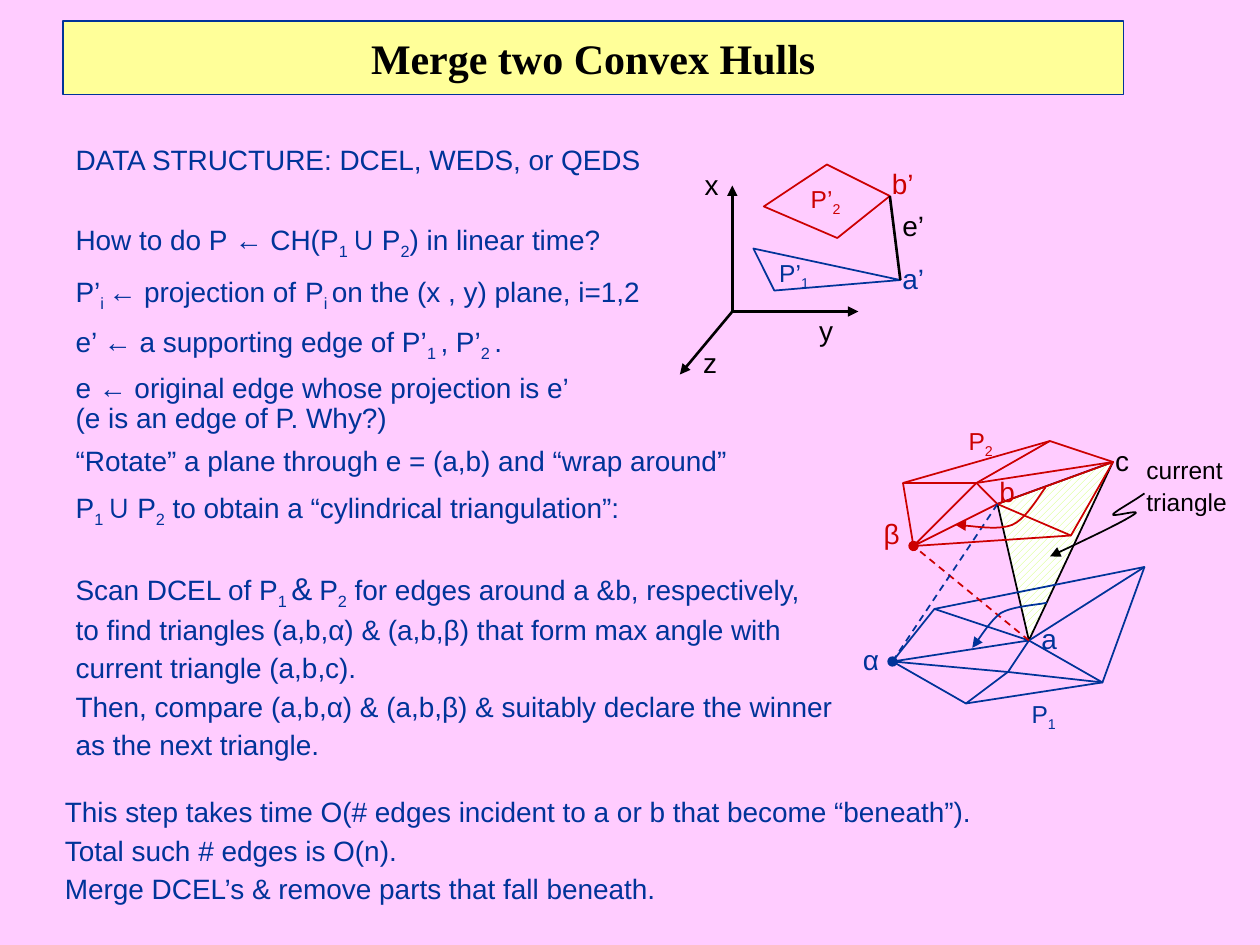
from lxml.etree import SubElement
from pptx import Presentation
from pptx.dml.color import RGBColor
from pptx.enum.dml import MSO_LINE, MSO_PATTERN
from pptx.enum.shapes import MSO_CONNECTOR
from pptx.enum.text import MSO_ANCHOR, MSO_AUTO_SIZE, PP_ALIGN
from pptx.oxml.ns import qn
from pptx.util import Inches, Pt

BLUE, RED, BLACK = "003399", "CC0000", "000000"
COLUMNS, ROWS = 120, 90
CELL = Inches(10) / COLUMNS

# Runs are plain strings or (text, size, baseline) tuples
ONE, TWO, INDEX = [(text, 16, -25) for text in ("1 ", "2", "i ")]
THIN = (" ", 14, 0)
P1_UNION_P2 = ["P", ONE, ("∪", 18, 0), THIN, "P", TWO]

# Each entry: line spacing, space before, runs
STEPS = [
    (0.9, 0, ["DATA STRUCTURE: DCEL, WEDS, or QEDS"]),
    (0.9, 25, ["How to do P ← CH(", *P1_UNION_P2, ") in linear time?"]),
    (0.9, 8.5, ["P’", INDEX, "← projection of", (" ", 18, 0), "P", INDEX,
                "on the (x , y) plane, i=1,2"]),
    (0.9, 8.5, ["e’ ← a supporting edge of P’", ONE, ", P’", ("2 ", 16, -25), "."]),
    (0.9, 8.5, ["e ← original edge whose projection is e’\v(e is an edge of P. Why?)"]),
    (0.8, 8.5, ["“Rotate” a plane through e = (a,b) and “wrap around”"]),
    (0.8, 8.5, [*P1_UNION_P2, " to obtain a “cylindrical triangulation”:"]),
    (0.7, 30, ["Scan DCEL of P", ONE, ("&", 18, 0), THIN, "P", TWO,
               " for edges around a &b, respectively,"]),
    (0.7, 8.5, ["to find triangles (a,b,α) & (a,b,β) that form max angle with"]),
    (0.7, 8.5, ["current triangle (a,b,c)."]),
    (0.7, 8.5, ["Then, compare (a,b,α) & (a,b,β) & suitably declare the winner"]),
    (0.7, 8.5, ["as the next triangle."]),
]
COST = [
    (0.7, 0, ["This step takes time O(# edges incident to a or b that become “beneath”)."]),
    (0.7, 8.5, ["Total such # edges is O(n)."]),
    (0.7, 8.5, ["Merge DCEL’s & remove parts that fall beneath."]),
]
CALLOUT = [(0.6, 0, ["current"]), (0.6, 8.5, ["triangle"])]

# Each entry: letter, subscript, colour, left, top, width in grid cells
LABELS = [
    ("x", "", BLACK, 65.9, 15.7, 3.75), ("y", "", BLACK, 76.8, 29.65, 3.75),
    ("z", "", BLACK, 65.75, 32.65, 3.75),
    ("P’", "1", BLUE, 73, 24, 5.25), ("P’", "2", RED, 76, 17, 5.25),
    ("e’", "", BLACK, 84.75, 19.67, 4.45), ("a’", "", BLUE, 84.75, 24.67, 4.45),
    ("b’", "", RED, 83.75, 15.67, 4.45),
    ("P", "2", RED, 91, 40, 4.8), ("P", "1", BLUE, 97, 66, 4.8),
    ("a", "", BLUE, 98, 59, 3.85), ("b", "", RED, 94, 45, 3.85),
    ("α", "", BLUE, 80.9, 61, 4.1), ("β", "", RED, 83, 49, 3.85),
    ("c", "", BLACK, 105, 42, 3.75),
]

# Corners of the two hulls in grid cells
A, B, C, ALPHA, BETA = (98, 61), (95, 48), (106, 44), (85, 63), (87, 52)
UPPER_LEFT, UPPER_TOP, UPPER_MID, UPPER_RIGHT = (86, 46), (100, 42), (93, 46), (102, 51)
LOWER_LEFT, LOWER_TOP, LOWER_RIGHT = (89, 58), (109, 54), (105, 65)
LOWER_END, LOWER_MID = (92, 67), (96, 64)

# Each entry: colour, Bézier control points (start, then three per piece)
CURVES = [
    (BLACK, [(109, 47), (107.7, 47.9), (106.2, 48.7), (106, 49), (105.8, 49.3),
             (109, 48.4), (108, 49), (107, 49.7), (103.4, 51.4), (100, 53)]),
    (BLUE, [(99.7, 57.4), (99, 57.6), (96.5, 57.7), (95.3, 58.4),
            (94.2, 59.2), (93.2, 61), (92.6, 61.7)]),
    (RED, [(99.6, 46.4), (99.1, 47), (97.8, 49.4), (96.4, 50),
           (94.9, 50.6), (92.2, 50), (91, 50)]),
]


def rgb(value):
    return RGBColor.from_string(value)


def cells(*values):
    return [round(value * CELL) for value in values]


def place(shape, left, top, width, height):
    box = zip(("left", "top", "width", "height"), cells(left, top, width, height))
    for name, value in box:
        setattr(shape, name, value)


def style_line(line, color, width=1, dashed=False, end=None):
    line.color.rgb = rgb(color)
    line.width = Pt(width)
    if dashed:
        line.dash_style = MSO_LINE.DASH
    if end:
        SubElement(line._get_or_add_ln(), qn("a:tailEnd"), type=end)


def write(frame, paragraphs, color, size=16, align=PP_ALIGN.LEFT, wrap=True):
    frame.word_wrap = wrap
    frame.auto_size = MSO_AUTO_SIZE.NONE
    frame.vertical_anchor = MSO_ANCHOR.TOP
    for number, (spacing, before, runs) in enumerate(paragraphs):
        paragraph = frame.add_paragraph() if number else frame.paragraphs[0]
        layout = {"alignment": align, "line_spacing": spacing,
                  "space_before": Pt(before), "space_after": Pt(0)}
        for name, value in layout.items():
            setattr(paragraph, name, value)
        for item in runs:
            text, points, baseline = (item, size, 0) if isinstance(item, str) else item
            for part_number, part in enumerate(text.split("\v")):
                if part_number:
                    paragraph.add_line_break()
                run = paragraph.add_run()
                run.text = part
                run.font.name, run.font.size = "Arial", Pt(points)
                run.font.color.rgb = rgb(color)
                if baseline:
                    run.font._element.set("baseline", str(baseline * 1000))


def add_text(slide, box, *content, **options):
    write(slide.shapes.add_textbox(*cells(*box)).text_frame, *content, **options)


def add_path(slide, points, color, closed=False, end=None):
    start, *rest = [cells(*point) for point in points]
    builder = slide.shapes.build_freeform(*start)
    builder.add_line_segments(rest, close=closed)
    path = builder.convert_to_shape()
    path.shadow.inherit = False
    path.fill.background()
    style_line(path.line, color, end=end)
    return path


def add_edge(slide, start, finish, color, **options):
    edge = slide.shapes.add_connector(MSO_CONNECTOR.STRAIGHT, *cells(*start, *finish))
    style_line(edge.line, color, **options)
    SubElement(edge._element.spPr, qn("a:effectLst"))


def bezier(controls, steps=10):
    """Sample a chain of cubic Bézier pieces."""
    points = [controls[0]]
    for first in range(0, len(controls) - 1, 3):
        piece = controls[first:first + 4]
        for step in range(1, steps + 1):
            t = step / steps
            weights = ((1 - t) ** 3, 3 * t * (1 - t) ** 2, 3 * t * t * (1 - t), t ** 3)
            points.append([sum(w * p[axis] for w, p in zip(weights, piece))
                           for axis in (0, 1)])
    return points


def add_title(slide):
    title = slide.shapes.title
    place(title, 6, 2, 101, 7)
    title.fill.solid()
    title.fill.fore_color.rgb = rgb("FFFF99")
    style_line(title.line, BLUE, 0.75)
    title.text_frame.text = "Merge two Convex Hulls"
    title.text_frame.vertical_anchor = MSO_ANCHOR.MIDDLE
    heading = title.text_frame.paragraphs[0]
    heading.alignment = PP_ALIGN.CENTER
    for name, value in {"name": "Times New Roman", "size": Pt(24), "bold": True}.items():
        setattr(heading.font, name, value)
    heading.font.color.rgb = rgb(BLACK)


def add_steps(slide):
    body = slide.placeholders[1]
    place(body, 6, 13.33, 75.6, 61.4)
    write(body.text_frame, STEPS, BLUE)
    for paragraph in body.text_frame.paragraphs:
        properties = paragraph._p.get_or_add_pPr()
        properties.set("marL", "0")
        properties.set("indent", "0")
        SubElement(properties, qn("a:buNone"))


def add_projection(slide):
    def at(x, y):
        return 69.75 + x, 29.67 + y

    for tip in ((0, -12), (12, 0), (-5, 6)):
        add_edge(slide, at(0, 0), at(*tip), BLACK, width=1.5, end="triangle")
    for color, corners in ((RED, [(3, -10), (9, -14), (15, -11), (10, -7)]),
                           (BLUE, [(16, -3), (4, -2), (2, -6)])):
        add_path(slide, [at(*corner) for corner in corners], color, closed=True)
    add_edge(slide, at(15, -11), at(16, -3), BLACK, width=1.5)


def add_hulls(slide):
    triangle = add_path(slide, [B, C, A], BLACK, closed=True)
    triangle.fill.patterned()
    triangle.fill.pattern = MSO_PATTERN.WIDE_UPWARD_DIAGONAL
    triangle.fill.fore_color.rgb = rgb("CCFF66")
    triangle.fill.back_color.rgb = rgb("FFFFFF")

    add_path(slide, [C, UPPER_RIGHT, BETA, UPPER_LEFT, UPPER_TOP], RED, closed=True)
    add_path(slide, [UPPER_RIGHT, B, C, B, UPPER_MID, UPPER_TOP], RED)
    add_path(slide, [C, UPPER_MID, BETA, B], RED)
    add_edge(slide, UPPER_MID, UPPER_LEFT, RED)
    add_path(slide, [ALPHA, LOWER_LEFT, LOWER_TOP, LOWER_RIGHT, LOWER_END], BLUE, closed=True)
    add_path(slide, [LOWER_TOP, A, LOWER_MID, ALPHA, A, LOWER_LEFT], BLUE)
    add_path(slide, [LOWER_END, LOWER_MID, LOWER_RIGHT, A], BLUE)
    add_edge(slide, A, BETA, RED, dashed=True, end="oval")
    add_edge(slide, B, ALPHA, BLUE, dashed=True, end="oval")
    for color, controls in CURVES:
        add_path(slide, bezier(controls), color, end="triangle")


def add_labels(slide):
    for letter, subscript, color, left, top, width in LABELS:
        size = 14 if subscript else 16
        runs = [letter] + ([(subscript, size, -25)] if subscript else [])
        add_text(slide, (left, top, width, 3.7 if subscript else 4.05), [(0.9, 0, runs)],
                 color, size=size, align=PP_ALIGN.CENTER, wrap=False)


def main():
    deck = Presentation()
    deck.slide_width, deck.slide_height = cells(COLUMNS, ROWS)
    slide = deck.slides.add_slide(deck.slide_layouts[1])
    slide.background.fill.solid()
    slide.background.fill.fore_color.rgb = rgb("FFCCFF")
    add_title(slide)
    add_steps(slide)
    add_projection(slide)
    add_hulls(slide)
    add_labels(slide)
    add_text(slide, (5, 76, 98, 11.1), COST, BLUE)
    add_text(slide, (108, 43.7, 10.1, 5.9), CALLOUT, BLACK, size=14, wrap=False)
    deck.save("out.pptx")


if __name__ == "__main__":
    main()
